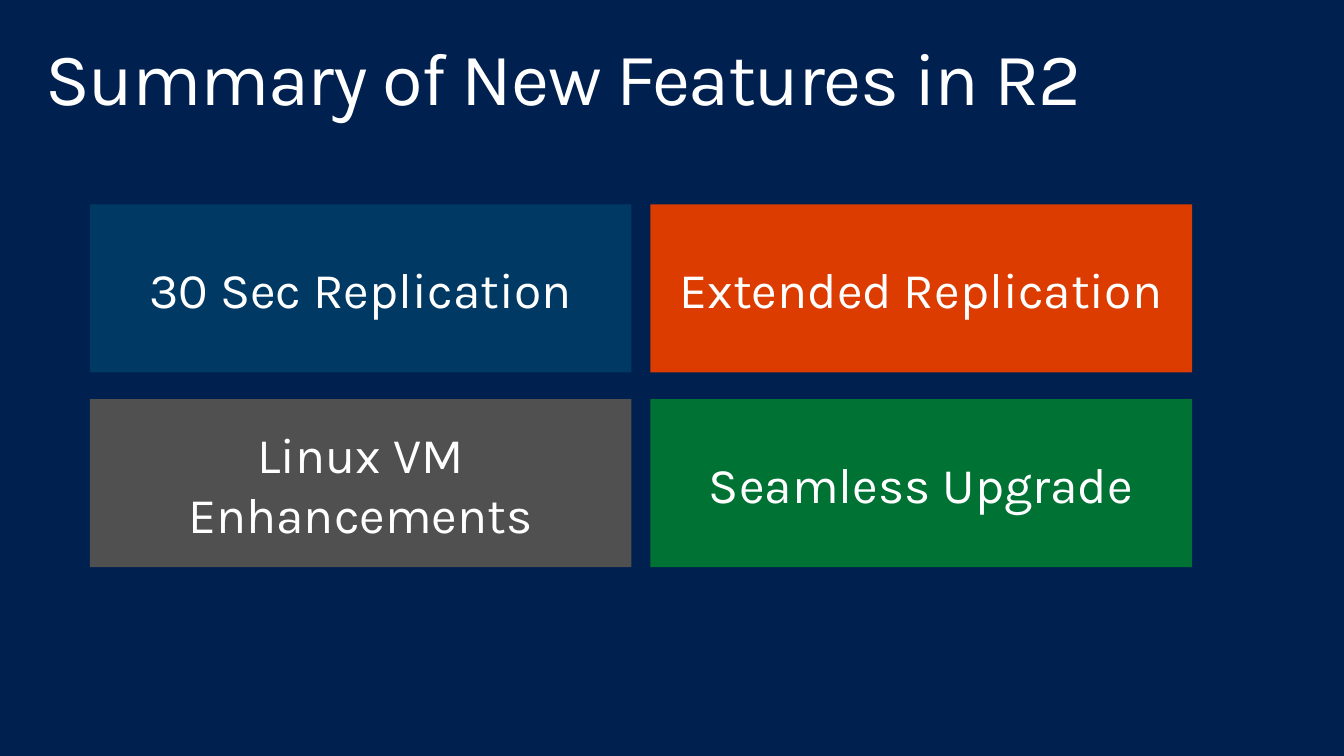
from dataclasses import dataclass

from pptx import Presentation
from pptx.dml.color import RGBColor
from pptx.enum import shapes, text
from pptx.util import Pt


@dataclass(frozen=True)
class Theme:
    font: str = "Karla"
    background: str = "002050"
    ink: str = "FFFFFF"
    blue: str = "003963"
    orange: str = "DC3C00"
    gray: str = "505050"
    green: str = "007233"
    title_size: float = 54
    tile_size: float = 36.3


def paint(fill, color):
    fill.solid()
    fill.fore_color.rgb = RGBColor.from_string(color)


class SlideBuilder:
    def __init__(self, slide, theme):
        self.slide = slide
        self.theme = theme
        paint(slide.background.fill, theme.background)

    def set_text(self, shape, words, *, size, align, anchor, margins,
                 line_spacing=None, tracking=None):
        """Set the text; margins are (horizontal, vertical), tracking is in points."""
        frame = shape.text_frame
        frame.word_wrap = True
        frame.auto_size = text.MSO_AUTO_SIZE.NONE
        frame.vertical_anchor = anchor
        frame.margin_left = frame.margin_right = Pt(margins[0])
        frame.margin_top = frame.margin_bottom = Pt(margins[1])
        paragraph = frame.paragraphs[0]
        paragraph.alignment = align
        if line_spacing:
            paragraph.line_spacing = line_spacing
        run = paragraph.add_run()
        run.text = words
        run.font.name = self.theme.font
        run.font.size = Pt(size)
        run.font.color.rgb = RGBColor.from_string(self.theme.ink)
        if tracking:
            run.font._element.set("spc", str(round(tracking * 100)))

    def title(self, words, left, top, width, height):
        heading = self.slide.shapes.title
        heading.left, heading.top = Pt(left), Pt(top)
        heading.width, heading.height = Pt(width), Pt(height)
        self.set_text(heading, words, size=self.theme.title_size,
                      align=text.PP_ALIGN.LEFT, anchor=text.MSO_ANCHOR.TOP,
                      margins=(11.5, 7.2), line_spacing=0.9, tracking=-1)

    def tile(self, words, color, left, top, width, height):
        feature = self.slide.shapes.add_shape(
            shapes.MSO_SHAPE.RECTANGLE, Pt(left), Pt(top), Pt(width), Pt(height))
        feature.shadow.inherit = False
        paint(feature.fill, color)
        feature.line.fill.background()
        self.set_text(feature, words, size=self.theme.tile_size,
                      align=text.PP_ALIGN.CENTER, anchor=text.MSO_ANCHOR.MIDDLE,
                      margins=(7.2, 3.6))


def main():
    deck = Presentation()
    deck.slide_width, deck.slide_height = Pt(979.2), Pt(550.8)
    theme = Theme()
    title_only = deck.slide_layouts[5]
    summary = SlideBuilder(deck.slides.add_slide(title_only), theme)
    summary.title("Summary of New Features in R2", 21.6, 23, 936, 72)

    features = [
        ("30 Sec Replication", theme.blue),
        ("Extended Replication", theme.orange),
        ("Linux VM Enhancements", theme.gray),
        ("Seamless Upgrade", theme.green),
    ]
    width, height = 394.6, 122.4
    column_gap, row_gap = 13.8, 19.5
    for index, (name, color) in enumerate(features):
        row, column = divmod(index, 2)
        summary.tile(name, color,
                     65.5 + column * (width + column_gap),
                     149 + row * (height + row_gap), width, height)

    deck.save("out.pptx")


if __name__ == "__main__":
    main()
